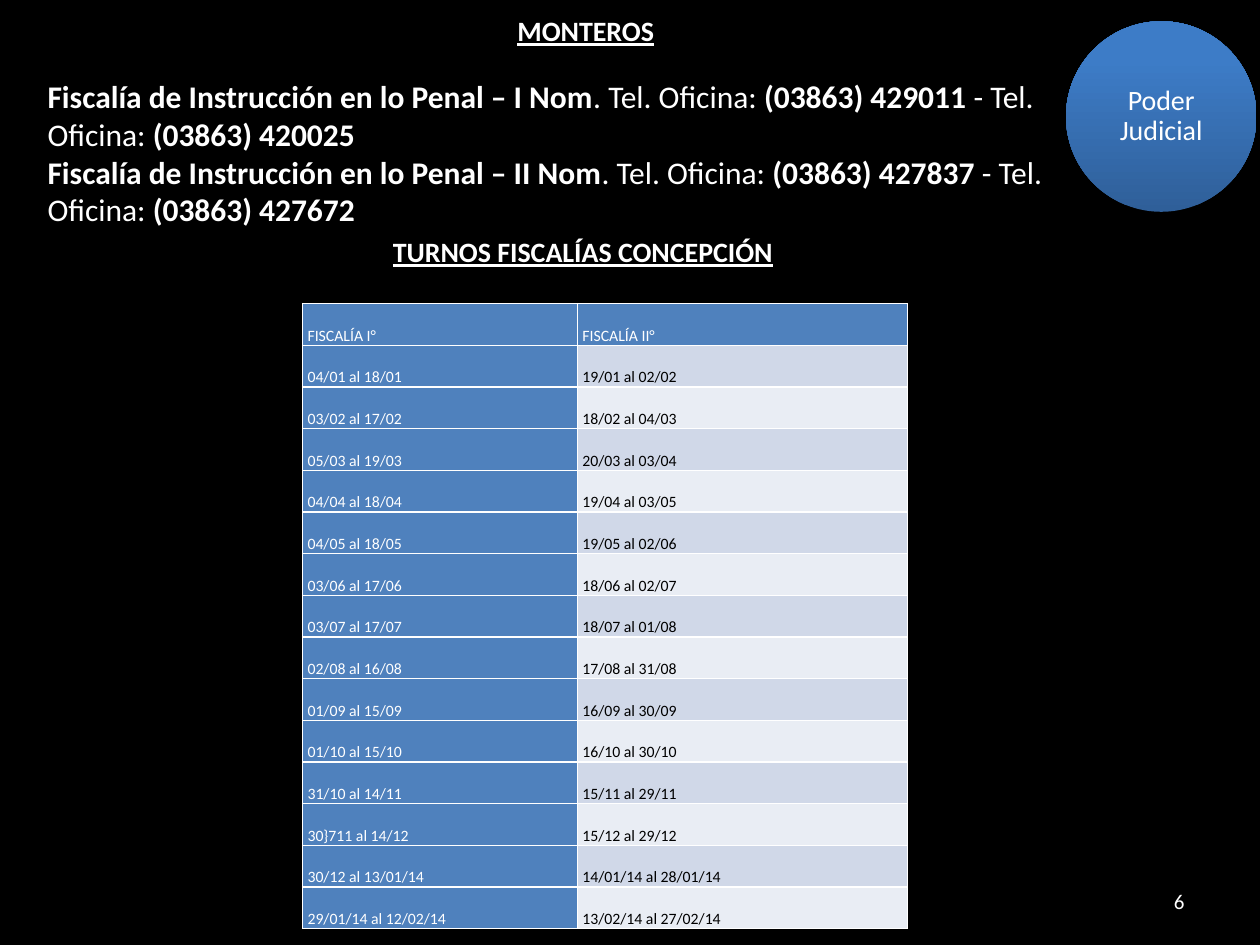
import pptx
import pptx.dml.color
import pptx.enum.shapes
import pptx.enum.text
import pptx.oxml
import pptx.oxml.ns
import pptx.util
from dataclasses import dataclass

Cm = pptx.util.Cm
Pt = pptx.util.Pt
Align = pptx.enum.text.PP_ALIGN
Anchor = pptx.enum.text.MSO_ANCHOR
AutoSize = pptx.enum.text.MSO_AUTO_SIZE


@dataclass(frozen=True)
class Theme:
    font: str = "Calibri"
    background: str = "000000"
    light: str = "FFFFFF"
    dark: str = "000000"
    accent: str = "4F81BD"
    bands: tuple = ("D0D8E8", "E9EDF4")
    circle_bottom: str = "2F5F99"
    circle_top: str = "3D7CC7"
    heading: int = 16
    body: int = 18
    number: int = 12
    cell: int = 9


def rgb(value):
    return pptx.dml.color.RGBColor.from_string(value)


def add_text(paragraph, text, *, font, size, color, bold=False, underline=False):
    run = paragraph.add_run()
    run.text = text
    run.font.name = font
    run.font.size = Pt(size)
    run.font.color.rgb = rgb(color)
    run.font.bold = bold
    run.font.underline = underline


class SlideBuilder:
    def __init__(self, slide, theme):
        self.slide = slide
        self.theme = theme
        slide.background.fill.solid()
        slide.background.fill.fore_color.rgb = rgb(theme.background)

    def label(self, paragraph, text, size, color=None, **style):
        add_text(paragraph, text, font=self.theme.font, size=size,
                 color=color or self.theme.light, **style)

    def text_box(self, left, top, width, height, wrap=True, grow=True):
        box = self.slide.shapes.add_textbox(Cm(left), Cm(top), Cm(width), Cm(height))
        frame = box.text_frame
        frame.word_wrap = wrap
        frame.auto_size = AutoSize.SHAPE_TO_FIT_TEXT if grow else AutoSize.NONE
        return frame

    def heading(self, paragraph, text):
        self.label(paragraph, text, self.theme.heading, bold=True, underline=True)

    def contact(self, paragraph, office, first_phone, second_phone):
        pieces = [office, ". Tel. Oficina: ", first_phone, " - Tel. Oficina: ", second_phone]
        for index, piece in enumerate(pieces):
            self.label(paragraph, piece, self.theme.body, bold=index % 2 == 0)

    def circle(self, left, top, diameter, text):
        shape = self.slide.shapes.add_shape(
            pptx.enum.shapes.MSO_SHAPE.OVAL, Cm(left), Cm(top), Cm(diameter), Cm(diameter))
        shape.shadow.inherit = False
        shape.line.fill.background()
        shape.fill.gradient()
        shape.fill.gradient_angle = 90
        bottom, upper = shape.fill.gradient_stops
        bottom.color.rgb, bottom.position = rgb(self.theme.circle_bottom), 0
        upper.color.rgb, upper.position = rgb(self.theme.circle_top), 0.8
        frame = shape.text_frame
        frame.word_wrap = True
        frame.vertical_anchor = Anchor.MIDDLE
        frame.margin_left = frame.margin_right = Cm(0.05)
        frame.margin_top = frame.margin_bottom = Cm(0.05)
        paragraph = frame.paragraphs[0]
        paragraph.alignment = Align.CENTER
        paragraph.line_spacing = 0.9
        self.label(paragraph, text, self.theme.heading)

    def cell_borders(self, cell):
        properties = cell._tc.get_or_add_tcPr()
        for index, side in enumerate(("lnL", "lnR", "lnT", "lnB")):
            properties.insert(index, pptx.oxml.parse_xml(
                f'<a:{side} {pptx.oxml.ns.nsdecls("a")} w="{Pt(1)}"><a:solidFill>'
                f'<a:srgbClr val="{self.theme.light}"/></a:solidFill></a:{side}>'))

    def table(self, left, top, column_widths, row_height, rows):
        table = self.slide.shapes.add_table(
            len(rows), len(column_widths), Cm(left), Cm(top),
            Cm(sum(column_widths)), Cm(row_height * len(rows))).table
        table.first_row = table.horz_banding = False
        for column, width in zip(table.columns, column_widths):
            column.width = Cm(width)
        for row_index, values in enumerate(rows):
            for column_index, value in enumerate(values):
                accented = row_index == 0 or column_index == 0
                band = self.theme.bands[(row_index - 1) % 2]
                cell = table.cell(row_index, column_index)
                cell.fill.solid()
                cell.fill.fore_color.rgb = rgb(self.theme.accent if accented else band)
                cell.vertical_anchor = Anchor.BOTTOM
                cell.margin_left = cell.margin_right = Cm(0.1)
                cell.margin_top = cell.margin_bottom = 0
                paragraph = cell.text_frame.paragraphs[0]
                paragraph.line_spacing = 1.15
                self.label(paragraph, value, self.theme.cell,
                           self.theme.light if accented else self.theme.dark)
                self.cell_borders(cell)


SHIFTS = [
    ("FISCALÍA I°", "FISCALÍA II°"),
    ("04/01 al 18/01", "19/01 al 02/02"),
    ("03/02 al 17/02", "18/02 al 04/03"),
    ("05/03 al 19/03", "20/03 al 03/04"),
    ("04/04 al 18/04", "19/04 al 03/05"),
    ("04/05 al 18/05", "19/05 al 02/06"),
    ("03/06 al 17/06", "18/06 al 02/07"),
    ("03/07 al 17/07", "18/07 al 01/08"),
    ("02/08 al 16/08", "17/08 al 31/08"),
    ("01/09 al 15/09", "16/09 al 30/09"),
    ("01/10 al 15/10", "16/10 al 30/10"),
    ("31/10 al 14/11", "15/11 al 29/11"),
    ("30}711 al 14/12", "15/12 al 29/12"),
    ("30/12 al 13/01/14", "14/01/14 al 28/01/14"),
    ("29/01/14 al 12/02/14", "13/02/14 al 27/02/14"),
]
CONTACTS = [
    ("Fiscalía de Instrucción en lo Penal – I Nom", "(03863) 429011", "(03863) 420025"),
    ("Fiscalía de Instrucción en lo Penal – II Nom", "(03863) 427837", "(03863) 427672"),
]


def main():
    presentation = pptx.Presentation()
    presentation.slide_width, presentation.slide_height = Cm(25.4), Cm(19.05)
    slide = presentation.slides.add_slide(presentation.slide_layouts[6])
    builder = SlideBuilder(slide, Theme())

    # Town heading and office phones
    frame = builder.text_box(0.71, 0.15, 22.2, 4.62)
    title = frame.paragraphs[0]
    title.alignment = Align.CENTER
    title.space_after = Pt(17)
    builder.heading(title, "MONTEROS")
    for contact in CONTACTS:
        builder.contact(frame.add_paragraph(), *contact)

    # Shift table with its heading
    builder.table(6.1, 6.12, (5.54, 6.65), 0.84, SHIFTS)
    frame = builder.text_box(7.67, 4.6, 8.28, 0.94, wrap=False)
    builder.heading(frame.paragraphs[0], "TURNOS FISCALÍAS CONCEPCIÓN")

    # Slide number
    frame = builder.text_box(18.21, 17.65, 5.92, 1.02, grow=False)
    frame.vertical_anchor = Anchor.MIDDLE
    frame.paragraphs[0].alignment = Align.RIGHT
    builder.label(frame.paragraphs[0], "6", builder.theme.number)

    # Section badge
    builder.circle(21.49, 0.43, 3.84, "Poder Judicial")

    presentation.save("out.pptx")


if __name__ == "__main__":
    main()
